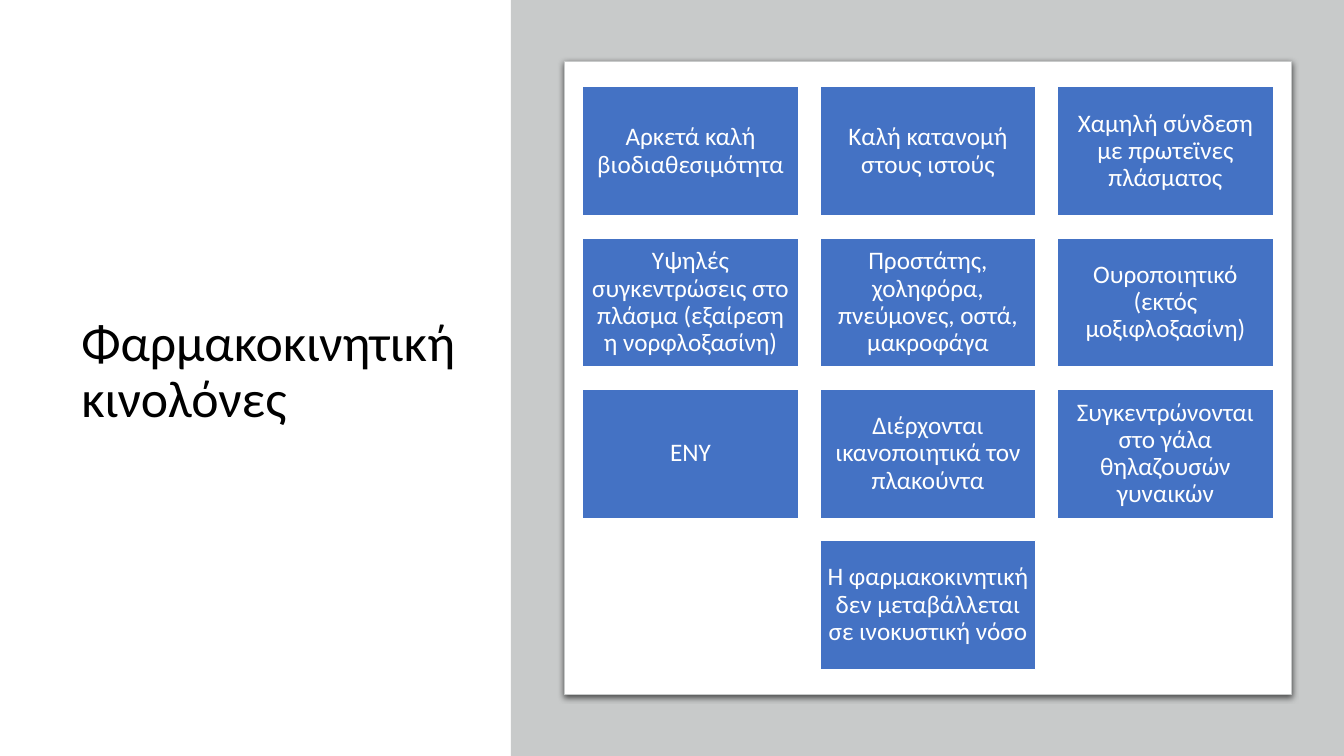
from dataclasses import dataclass

from lxml.etree import SubElement
from pptx import Presentation
from pptx.dml.color import RGBColor
from pptx.enum.shapes import MSO_SHAPE
from pptx.enum.text import MSO_ANCHOR, PP_ALIGN
from pptx.oxml.ns import qn
from pptx.util import Pt


@dataclass(frozen=True)
class Theme:
    font: str = "Calibri"
    black: str = "000000"
    white: str = "FFFFFF"
    grey: str = "C8CACA"
    blue: str = "4472C4"
    title_size: float = 37
    card_size: float = 18


THEME = Theme()
TITLE = "Φαρμακοκινητική κινολόνες"
CARD_ROWS = [
    ["Αρκετά καλή βιοδιαθεσιμότητα",
     "Καλή κατανομή στους ιστούς",
     "Χαμηλή σύνδεση με πρωτεϊνες πλάσματος"],
    ["Υψηλές συγκεντρώσεις στο πλάσμα (εξαίρεση η νορφλοξασίνη)",
     "Προστάτης, χοληφόρα, πνεύμονες, οστά, μακροφάγα",
     "Ουροποιητικό (εκτός μοξιφλοξασίνη)"],
    ["ΕΝΥ",
     "Διέρχονται ικανοποιητικά τον πλακούντα",
     "Συγκεντρώνονται στο γάλα θηλαζουσών γυναικών"],
    ["Η φαρμακοκινητική δεν μεταβάλλεται σε ινοκυστική νόσο"],
]
COLUMNS = 3
CARD_LEFT, CARD_TOP = 416.2, 62
CARD_WIDTH, CARD_HEIGHT = 154.1, 92.2
CARD_STEP_X, CARD_STEP_Y = 169.6, 108
CARD_INSET = 5


def write_text(frame, text, size, color, align):
    frame.word_wrap = True
    frame.vertical_anchor = MSO_ANCHOR.MIDDLE
    frame.text = text
    paragraph = frame.paragraphs[0]
    paragraph.alignment = align
    paragraph.line_spacing = 0.9
    font = paragraph.runs[0].font
    font.name = THEME.font
    font.size = Pt(size)
    font.color.rgb = RGBColor.from_string(color)


def add_block(slide, box, fill, line=None, line_width=1):
    block = slide.shapes.add_shape(MSO_SHAPE.RECTANGLE, *map(Pt, box))
    block.shadow.inherit = False
    block.fill.solid()
    block.fill.fore_color.rgb = RGBColor.from_string(fill)
    if line:
        block.line.color.rgb = RGBColor.from_string(line)
        block.line.width = Pt(line_width)
    else:
        block.line.fill.background()
    return block


def add_soft_shadow(block):
    """Give the block a blurred shadow that falls straight down."""
    effects = block.element.spPr.find(qn("a:effectLst"))
    shadow = SubElement(effects, qn("a:outerShdw"), blurRad=str(Pt(4.5)),
                        dist=str(Pt(1.5)), dir="5400000", algn="t", rotWithShape="0")
    color = SubElement(shadow, qn("a:srgbClr"), val=THEME.black)
    SubElement(color, qn("a:alpha"), val="63000")


def add_title(slide):
    title = slide.shapes.add_textbox(Pt(51), Pt(49.7), Pt(288.7), Pt(433.4))
    write_text(title.text_frame, TITLE, THEME.title_size, THEME.black, PP_ALIGN.LEFT)


def add_card(slide, text, column, row):
    card = add_block(slide, (CARD_LEFT + column * CARD_STEP_X, CARD_TOP + row * CARD_STEP_Y,
                             CARD_WIDTH, CARD_HEIGHT), THEME.blue, THEME.white)
    frame = card.text_frame
    frame.margin_left = frame.margin_right = Pt(CARD_INSET)
    frame.margin_top = frame.margin_bottom = Pt(CARD_INSET)
    write_text(frame, text, THEME.card_size, THEME.white, PP_ALIGN.CENTER)


def add_cards(slide):
    """Lay the cards out in rows, centring a row that is not full."""
    for row, texts in enumerate(CARD_ROWS):
        first_column = (COLUMNS - len(texts)) / 2
        for index, text in enumerate(texts):
            add_card(slide, text, first_column + index, row)


def main():
    deck = Presentation()
    deck.slide_width, deck.slide_height = Pt(960), Pt(540)
    slide = deck.slides.add_slide(deck.slide_layouts[6])
    add_title(slide)
    add_block(slide, (365, 0, 595, 540), THEME.grey)
    panel = add_block(slide, (403.2, 44, 519.1, 452.2), THEME.white, THEME.grey, 0.75)
    add_soft_shadow(panel)
    add_cards(slide)
    deck.save("out.pptx")


if __name__ == "__main__":
    main()
